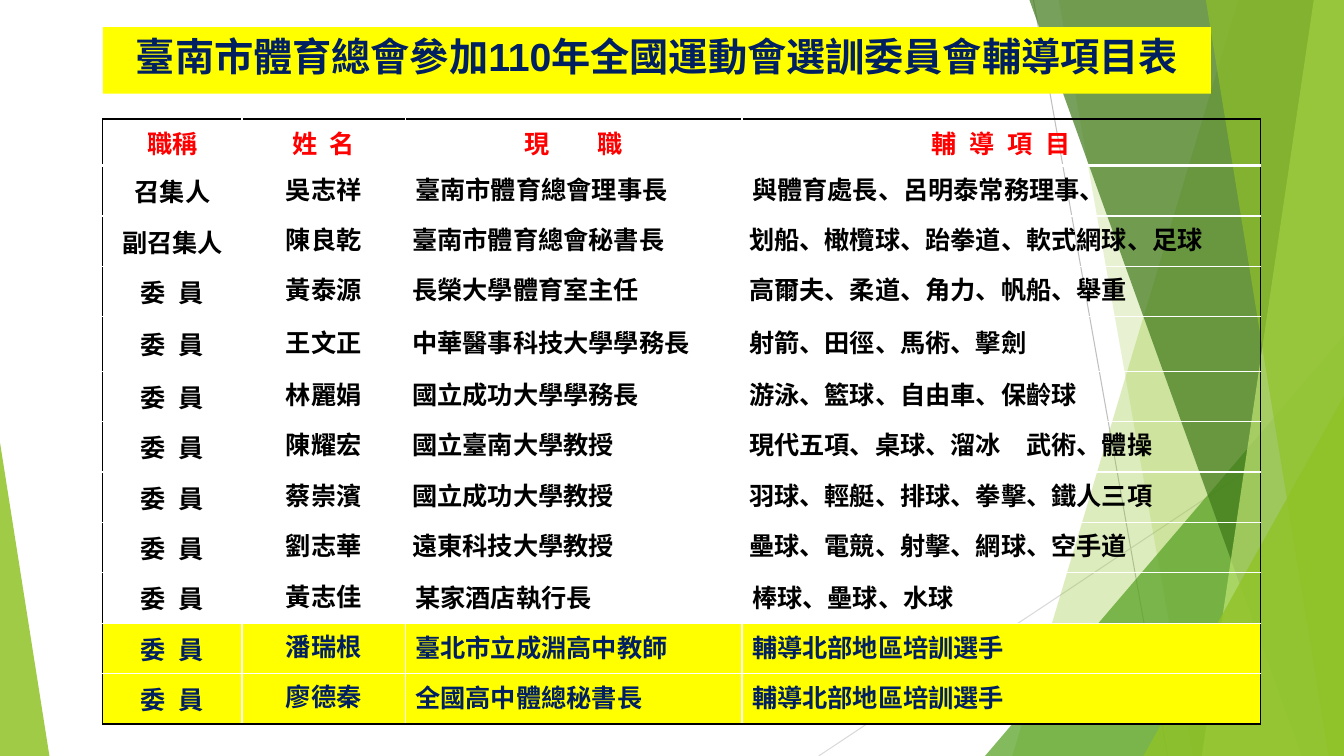
import pptx
import pptx.dml.color
import pptx.enum.shapes
import pptx.enum.text
import pptx.oxml
import pptx.oxml.ns
import pptx.util
from lxml import etree

Inches = pptx.util.Inches
Pt = pptx.util.Pt
RGBColor = pptx.dml.color.RGBColor
MSO_SHAPE = pptx.enum.shapes.MSO_SHAPE
MSO_ANCHOR = pptx.enum.text.MSO_ANCHOR
PP_ALIGN = pptx.enum.text.PP_ALIGN
qn = pptx.oxml.ns.qn

WIDTH, HEIGHT = 13.33, 7.5
BLACK = RGBColor(0x00, 0x00, 0x00)
WHITE = RGBColor(0xFF, 0xFF, 0xFF)
RED = RGBColor(0xFF, 0x00, 0x00)
NAVY = RGBColor(0x00, 0x20, 0x60)
YELLOW = RGBColor(0xFF, 0xFF, 0x00)
GREEN = RGBColor(0x90, 0xC2, 0x26)
MID_GREEN = RGBColor(0x54, 0xA0, 0x21)
DARK_GREEN = RGBColor(0x3F, 0x78, 0x19)
PALE_GREEN = RGBColor(0xC0, 0xE4, 0x74)
GRAY = RGBColor(0xBF, 0xBF, 0xBF)
LIGHT_GRAY = RGBColor(0xD9, 0xD9, 0xD9)

TITLE = "臺南市體育總會參加110年全國運動會選訓委員會輔導項目表"
COLUMN_WIDTHS = [1.38, 1.62, 3.34, 5.14]
ROW_HEIGHTS = [0.38] + [0.5] * 3 + [0.54] + [0.5] * 7
MEMBER = "委 員"
ROWS = [
    ("職稱", "姓 名", "現 職", "輔 導 項 目"),
    ("召集人", "吳志祥", "臺南市體育總會理事長", "與體育處長、呂明泰常務理事、"),
    ("副召集人", "陳良乾", "臺南市體育總會秘書長", "划船、橄欖球、跆拳道、軟式網球、足球"),
    (MEMBER, "黃泰源", "長榮大學體育室主任", "高爾夫、柔道、角力、帆船、舉重"),
    (MEMBER, "王文正", "中華醫事科技大學學務長", "射箭、田徑、馬術、擊劍"),
    (MEMBER, "林麗娟", "國立成功大學學務長", "游泳、籃球、自由車、保齡球"),
    (MEMBER, "陳耀宏", "國立臺南大學教授", "現代五項、桌球、溜冰　武術、體操"),
    (MEMBER, "蔡崇濱", "國立成功大學教授", "羽球、輕艇、排球、拳擊、鐵人三項"),
    (MEMBER, "劉志華", "遠東科技大學教授", "壘球、電競、射擊、網球、空手道"),
    (MEMBER, "黃志佳", "某家酒店執行長", "棒球、壘球、水球"),
    (MEMBER, "潘瑞根", "臺北市立成淵高中教師", "輔導北部地區培訓選手"),
    (MEMBER, "廖德秦", "全國高中體總秘書長", "輔導北部地區培訓選手"),
]
LAST_ROW, LAST_COLUMN = len(ROWS) - 1, len(COLUMN_WIDTHS) - 1
FIRST_HIGHLIGHT = 10
KARLA_CELLS = {(0, 1), (0, 2), (0, 3), (1, 1), (1, 3), (9, 2),
               (10, 2), (10, 3), (11, 2), (11, 3)}
# Letter spacing in points for spread-out words
LETTER_GAPS = {"姓 名": 2.5, "現 職": 15, "輔 導 項 目": 2.5, MEMBER: 2.5}


def paint(shape, color, opacity=100):
    """Fill without outline or shadow; opacity in percent."""
    shape.shadow.inherit = False
    shape.line.fill.background()
    shape.fill.solid()
    shape.fill.fore_color.rgb = color
    if opacity < 100:
        color_element = shape.fill._xPr.find(qn("a:solidFill"))[0]
        etree.SubElement(color_element, qn("a:alpha"), val=str(opacity * 1000))


def add_hairline(slide, start, end, color):
    line = slide.shapes.add_connector(
        pptx.enum.shapes.MSO_CONNECTOR.STRAIGHT,
        *[Inches(value) for value in start + end])
    line.line.color.rgb = color
    line.line.width = Pt(0.75)
    etree.SubElement(line._element.spPr, qn("a:effectLst"))


def add_band(slide, top_x, bottom_x, color, opacity):
    """Full-height band from a slanted left edge to the slide's right edge."""
    builder = slide.shapes.build_freeform(Inches(top_x), 0)
    corners = [(WIDTH, 0), (WIDTH, HEIGHT), (bottom_x, HEIGHT)]
    builder.add_line_segments([(Inches(x), Inches(y)) for x, y in corners])
    paint(builder.convert_to_shape(), color, opacity)


def add_corner(slide, left, top, width, apex, color, opacity):
    """Triangle standing on the slide's bottom edge."""
    triangle = slide.shapes.add_shape(
        MSO_SHAPE.ISOSCELES_TRIANGLE, Inches(left), Inches(top),
        Inches(width), Inches(HEIGHT - top))
    triangle.adjustments[0] = apex
    paint(triangle, color, opacity)


def add_facets(slide):
    add_hairline(slide, (10.25, 0), (11.58, HEIGHT), GRAY)
    add_hairline(slide, (WIDTH, 4.03), (8.12, HEIGHT), LIGHT_GRAY)
    add_band(slide, 12.28, 10.04, GREEN, 30)
    add_band(slide, 10.5, 11.83, GREEN, 20)
    add_corner(slide, 9.77, 3.33, 3.56, 1, MID_GREEN, 72)
    add_band(slide, 10.21, 12.91, DARK_GREEN, 70)
    add_band(slide, 13.03, 11.92, PALE_GREEN, 70)
    add_band(slide, 11.96, 13.18, GREEN, 65)
    add_corner(slide, 11.34, 3.93, 1.99, 1, GREEN, 80)
    add_corner(slide, 0, 4.39, 0.49, 0, GREEN, 85)


def style_font(font, name, size, color):
    font.name = name
    font.size = Pt(size)
    font.bold = True
    font.color.rgb = color


def add_title(slide, left, top, width, height):
    banner = slide.shapes.add_shape(
        MSO_SHAPE.RECTANGLE, Inches(left), Inches(top), Inches(width), Inches(height))
    paint(banner, YELLOW)
    banner.text_frame.word_wrap = True
    banner.text_frame.vertical_anchor = MSO_ANCHOR.TOP
    paragraph = banner.text_frame.paragraphs[0]
    paragraph.text = TITLE
    paragraph.alignment = PP_ALIGN.CENTER
    style_font(paragraph.font, "Arial", 28, NAVY)


def set_borders(cell, row, column):
    """Black frame around the table, white rules inside it."""
    edges = [
        ("a:lnL", column == 0, 1),
        ("a:lnR", column == LAST_COLUMN, 1),
        ("a:lnT", row == 0, 1),
        ("a:lnB", row == LAST_ROW, 3 if row == 0 else 1),
    ]
    properties = cell._tc.get_or_add_tcPr()
    for position, (tag, is_frame, width) in enumerate(edges):
        line = etree.Element(qn(tag), w=str(Pt(width)))
        fill = etree.SubElement(line, qn("a:solidFill"))
        color = BLACK if is_frame else WHITE
        etree.SubElement(fill, qn("a:srgbClr"), val=str(color))
        properties.insert(position, line)


def write_cell(cell, row, column, text):
    paragraph = cell.text_frame.paragraphs[0]
    gap = LETTER_GAPS.get(text)
    if gap:
        spread_run = paragraph.add_run()
        spread_run.text = text[:-1]
        spread_run.font._element.set("spc", str(int(gap * 100)))
        paragraph.add_run().text = text[-1]
    else:
        paragraph.text = text
    if row == 0 or column < 2:
        paragraph.alignment = PP_ALIGN.CENTER
    color = RED if row == 0 else NAVY if row >= FIRST_HIGHLIGHT else BLACK
    name = "Karla" if (row, column) in KARLA_CELLS else "Arial"
    style_font(paragraph.font, name, 18, color)

    is_heading = row == 0 or column == 0
    is_loose = row == 1 or (row >= 9 and column >= 2)
    if is_heading or not is_loose:
        cell.vertical_anchor = MSO_ANCHOR.MIDDLE
    if not is_heading and not is_loose:
        paragraph.line_spacing = Pt(22)
        cell.margin_left = cell.margin_right = Inches(0.07)
        cell.margin_top = cell.margin_bottom = 0


def add_committee_table(slide, left, top):
    table = slide.shapes.add_table(
        len(ROWS), len(COLUMN_WIDTHS), Inches(left), Inches(top),
        Inches(sum(COLUMN_WIDTHS)), Inches(sum(ROW_HEIGHTS))).table
    table.first_row = table.horz_banding = False
    for column, width in zip(table.columns, COLUMN_WIDTHS):
        column.width = Inches(width)
    for row, texts in enumerate(ROWS):
        table.rows[row].height = Inches(ROW_HEIGHTS[row])
        for column, text in enumerate(texts):
            cell = table.cell(row, column)
            write_cell(cell, row, column, text)
            if row >= FIRST_HIGHLIGHT:
                cell.fill.solid()
                cell.fill.fore_color.rgb = YELLOW
            else:
                cell.fill.background()
            set_borders(cell, row, column)


def main():
    presentation = pptx.Presentation()
    presentation.slide_width = Inches(WIDTH)
    presentation.slide_height = Inches(HEIGHT)
    slide = presentation.slides.add_slide(presentation.slide_layouts[6])
    add_facets(slide)
    add_title(slide, 1.02, 0.27, 10.99, 0.66)
    add_committee_table(slide, 1.02, 1.18)
    presentation.save("out.pptx")


if __name__ == "__main__":
    main()
